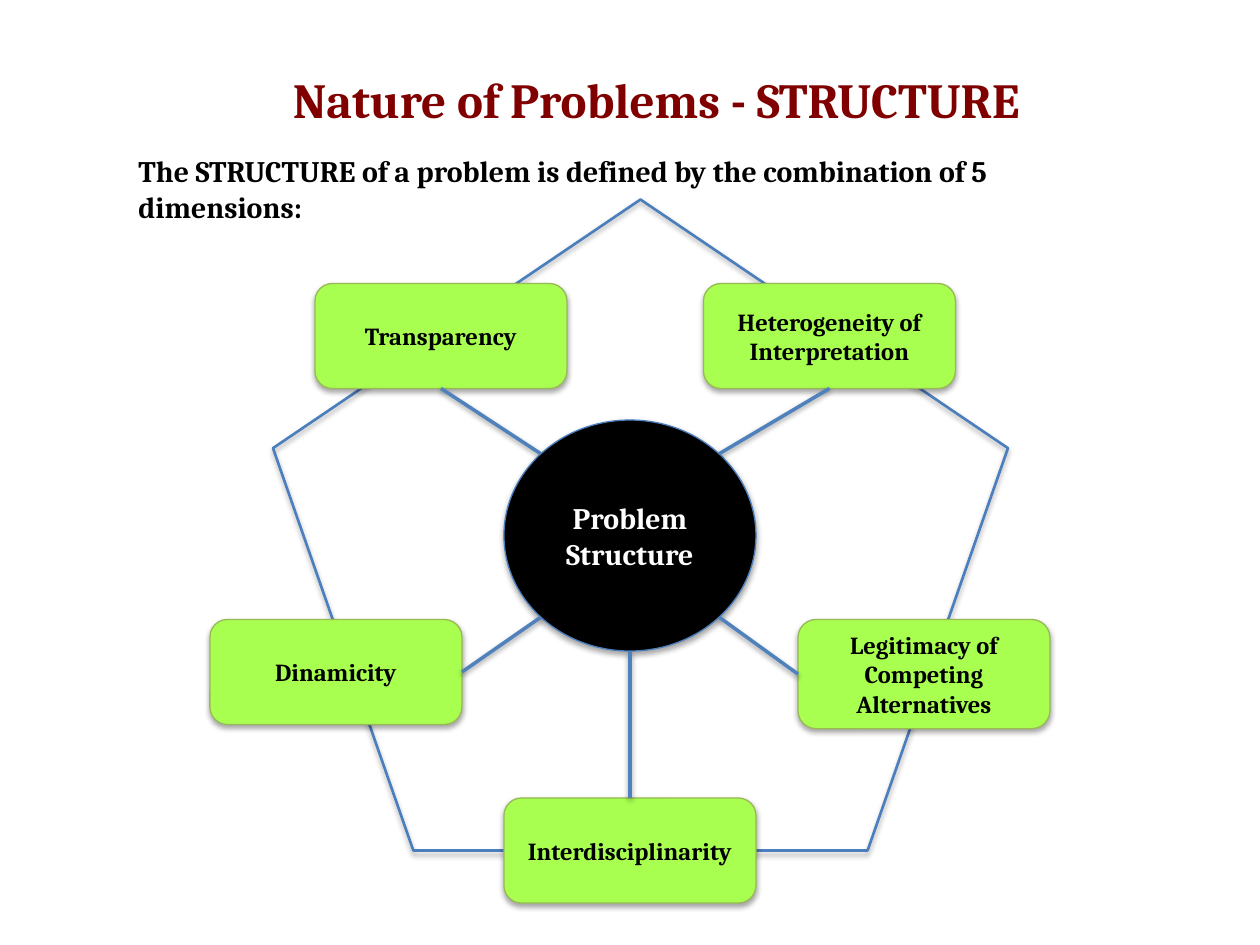
"""Build a slide showing the five dimensions that define a problem's structure."""
import math

import pptx
import pptx.dml.color
import pptx.enum.shapes
import pptx.enum.text
import pptx.oxml
import pptx.oxml.ns
import pptx.util

RGB = pptx.dml.color.RGBColor
MAROON = RGB(0x80, 0x00, 0x00)
BLACK = RGB(0x00, 0x00, 0x00)
WHITE = RGB(0xFF, 0xFF, 0xFF)
LIME = RGB(0xA8, 0xFF, 0x50)
LIME_EDGE = RGB(0x98, 0xB9, 0x55)
BLUE_EDGE = RGB(0x4B, 0x7E, 0xBC)
SPOKE_BLUE = RGB(0x4F, 0x81, 0xBD)

SHAPE = pptx.enum.shapes.MSO_SHAPE
ALIGN = pptx.enum.text.PP_ALIGN
ANCHOR = pptx.enum.text.MSO_ANCHOR
FONT = "Cambria"
COLUMNS, ROWS = 120, 90

TITLE = ("Nature of Problems - STRUCTURE", (21, 6, 83, 9.5))
INTRO = ("The STRUCTURE of a problem is defined by the combination of 5 dimensions:",
         (12, 14, 98, 4.7))
RING = (26, 19, 70, 62)
HUB = ("Problem Structure", (48, 40, 24, 22))
BOTTOM, LEFT, RIGHT, TOP = (0.5, 1), (0, 0.5), (1, 0.5), (0.5, 0)
DIMENSIONS = [
    ("Transparency", (30, 27, 24, 10), BOTTOM, 225),
    ("Heterogeneity of Interpretation", (67, 27, 24, 10), BOTTOM, 315),
    ("Dinamicity", (20, 59, 24, 10), RIGHT, 135),
    ("Interdisciplinarity", (48, 76, 24, 10), TOP, 90),
    ("Legitimacy of Competing Alternatives", (76, 59, 24, 10.4), LEFT, 45),
]

deck = pptx.Presentation()
deck.slide_width, deck.slide_height = pptx.util.Inches(10), pptx.util.Inches(7.5)
slide = deck.slides.add_slide(deck.slide_layouts[6])


def place(cells):
    units = (deck.slide_width / COLUMNS, deck.slide_height / ROWS) * 2
    return [round(cell * unit) for cell, unit in zip(cells, units)]


def cast_shadow(part, distance, opacity):
    properties = part._element.spPr
    for old in properties.findall(pptx.oxml.ns.qn("a:effectLst")):
        properties.remove(old)
    properties.append(pptx.oxml.parse_xml(
        f'<a:effectLst {pptx.oxml.ns.nsdecls("a")}>'
        f'<a:outerShdw blurRad="40000" dist="{distance}" dir="5400000" rotWithShape="0">'
        f'<a:srgbClr val="000000"><a:alpha val="{opacity}000"/></a:srgbClr>'
        '</a:outerShdw></a:effectLst>'))


def write(part, words, size, color, align, anchor):
    frame = part.text_frame
    frame.word_wrap = True
    frame.vertical_anchor = anchor
    frame.text = words
    paragraph = frame.paragraphs[0]
    paragraph.alignment = align
    font = paragraph.runs[0].font
    font.name, font.size, font.bold = FONT, pptx.util.Pt(size), True
    font.color.rgb = color


def add_outline(preset, cells, fill, edge, weight=0.75):
    part = slide.shapes.add_shape(preset, *place(cells))
    part.shadow.inherit = False
    if fill is None:
        part.fill.background()
    else:
        part.fill.solid()
        part.fill.fore_color.rgb = fill
    part.line.color.rgb = edge
    part.line.width = pptx.util.Pt(weight)
    cast_shadow(part, 23000, 35)
    return part


def add_heading(content, size, color, align):
    words, cells = content
    write(slide.shapes.add_textbox(*place(cells)), words, size, color, align, ANCHOR.TOP)


def add_spoke(cells, side, degrees):
    left, top, width, height = HUB[1]
    angle = math.radians(degrees)
    start = (left + width / 2 * (1 + math.cos(angle)), top + height / 2 * (1 + math.sin(angle)))
    end = (cells[0] + cells[2] * side[0], cells[1] + cells[3] * side[1])
    spoke = slide.shapes.add_connector(
        pptx.enum.shapes.MSO_CONNECTOR.STRAIGHT, *place(start + end))
    spoke.line.color.rgb = SPOKE_BLUE
    spoke.line.width = pptx.util.Pt(2)
    cast_shadow(spoke, 20000, 38)


add_outline(SHAPE.REGULAR_PENTAGON, RING, None, BLUE_EDGE, 1.5)
hub = add_outline(SHAPE.OVAL, HUB[1], BLACK, BLUE_EDGE)
write(hub, HUB[0], 17, WHITE, ALIGN.CENTER, ANCHOR.MIDDLE)
add_heading(TITLE, 28, MAROON, ALIGN.CENTER)
add_heading(INTRO, 17, BLACK, ALIGN.LEFT)
for label, cells, side, degrees in DIMENSIONS:
    dimension = add_outline(SHAPE.ROUNDED_RECTANGLE, cells, LIME, LIME_EDGE)
    write(dimension, label, 14, BLACK, ALIGN.CENTER, ANCHOR.MIDDLE)
    add_spoke(cells, side, degrees)

deck.save("out.pptx")
